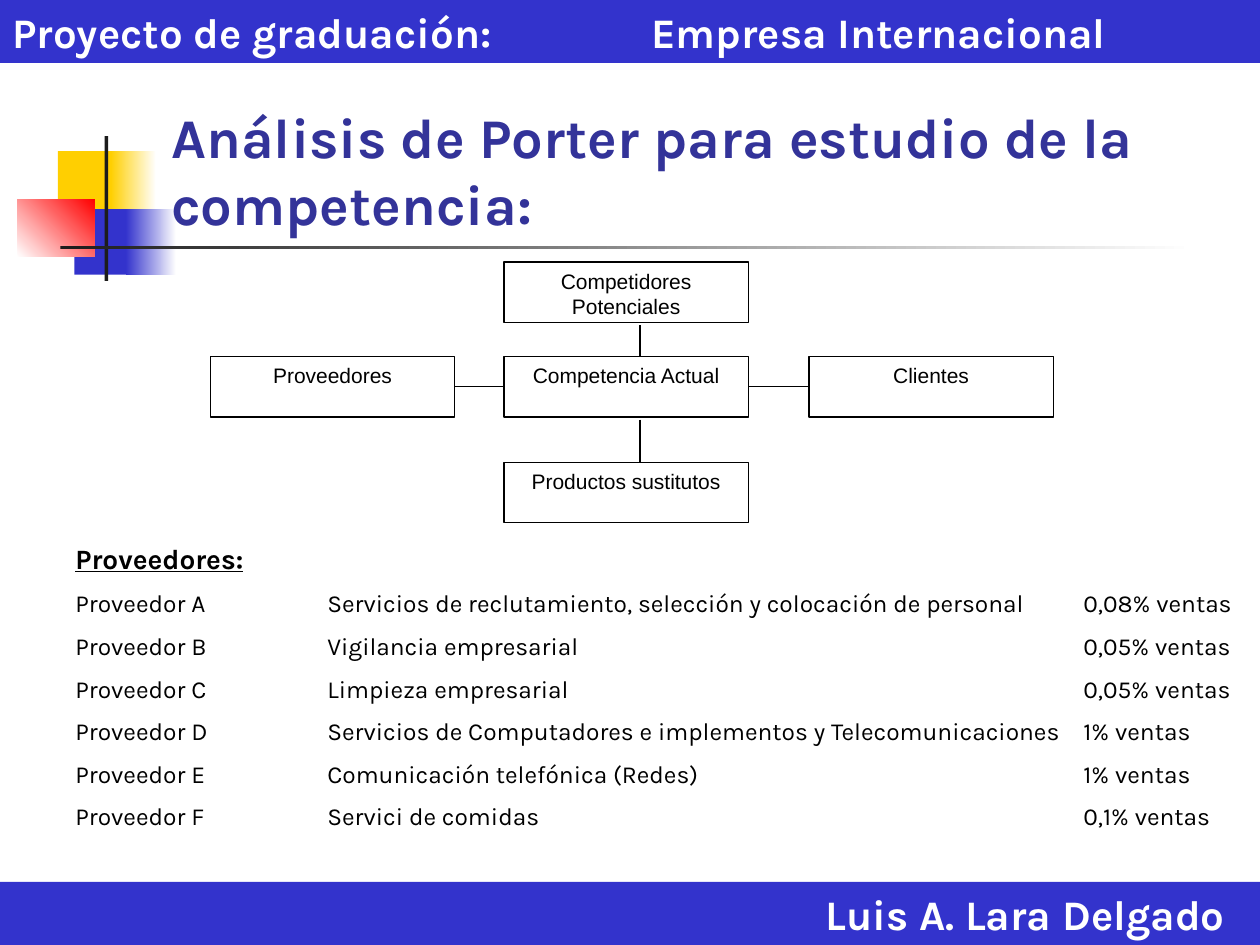
from dataclasses import dataclass

import lxml.etree
import pptx
import pptx.dml.color
import pptx.enum.shapes
import pptx.enum.text
import pptx.oxml.ns
import pptx.util

Inches = pptx.util.Inches
Pt = pptx.util.Pt
ALIGN = pptx.enum.text.PP_ALIGN
ANCHOR = pptx.enum.text.MSO_ANCHOR

COLORS = {
    "white": "FFFFFF",
    "black": "000000",
    "blue": "3333CC",
    "title": "333399",
    "yellow": "FFCF01",
    "red": "FF0000",
    "dark": "1C1C1C",
}


@dataclass(frozen=True)
class Area:
    left: float
    top: float
    width: float
    height: float

    def lengths(self) -> tuple:
        return tuple(Inches(v) for v in (self.left, self.top, self.width, self.height))


@dataclass(frozen=True)
class Ornament:
    area: Area
    colors: tuple
    angle: int = 0


@dataclass(frozen=True)
class Force:
    text: str
    left: float
    top: float


@dataclass(frozen=True)
class Supplier:
    name: str
    service: str
    share: str


ORNAMENTS = [
    Ornament(Area(0.46, 1.2, 0.48, 0.52), ("yellow",)),
    Ornament(Area(0.88, 1.2, 0.36, 0.52), ("yellow", "white")),
    Ornament(Area(0.59, 1.66, 0.46, 0.52), ("blue",)),
    Ornament(Area(1, 1.66, 0.4, 0.52), ("blue", "white")),
    Ornament(Area(0.14, 1.58, 0.61, 0.46), ("white", "red"), 45),
    Ornament(Area(0.83, 1.08, 0.03, 1.15), ("dark",)),
    Ornament(Area(0.48, 1.95, 9, 0.03), ("dark", "white")),
]

FORCES = {
    "entrants": Force("Competidores Potenciales", 4, 2.08),
    "clients": Force("Clientes", 6.42, 2.83),
    "suppliers": Force("Proveedores", 1.67, 2.83),
    "rivals": Force("Competencia Actual", 4, 2.83),
    "substitutes": Force("Productos sustitutos", 4, 3.67),
}

SUPPLIERS = [
    Supplier("Proveedor A", "Servicios de reclutamiento, selección y colocación de personal", "0,08% ventas"),
    Supplier("Proveedor B", "Vigilancia empresarial", "0,05% ventas"),
    Supplier("Proveedor C", "Limpieza empresarial", "0,05% ventas"),
    Supplier("Proveedor D", "Servicios de Computadores e implementos y Telecomunicaciones", "1% ventas"),
    Supplier("Proveedor E", "Comunicación telefónica (Redes)", "1% ventas"),
    Supplier("Proveedor F", "Servici de comidas", "0,1% ventas"),
]

BAR_FONT = {"name": "Karla", "size": Pt(24), "bold": True}
TITLE_FONT = {"name": "Karla", "size": Pt(32), "bold": True}
FORCE_FONT = {"name": "Arial", "size": Pt(12), "bold": False}
HEADING_FONT = {"name": "Karla", "size": Pt(16), "bold": True, "underline": True}
SUPPLIER_FONT = {"name": "Karla", "size": Pt(14), "bold": False}


def rgb(name: str):
    return pptx.dml.color.RGBColor.from_string(COLORS[name])


def write(para, text: str, font: dict, color: str, align=ALIGN.LEFT) -> None:
    para.alignment = align
    span = para.add_run()
    span.text = text
    for key, value in font.items():
        setattr(span.font, key, value)
    span.font.color.rgb = rgb(color)


def set_tabs(para, positions: tuple) -> None:
    properties = para._p.get_or_add_pPr()
    tabs = lxml.etree.SubElement(properties, pptx.oxml.ns.qn("a:tabLst"))
    for position in positions:
        tab = lxml.etree.SubElement(tabs, pptx.oxml.ns.qn("a:tab"))
        tab.set("pos", str(Inches(position)))
        tab.set("algn", "l")


def add_rectangle(page, area: Area, colors: tuple, angle: int = 0):
    box = page.shapes.add_shape(pptx.enum.shapes.MSO_SHAPE.RECTANGLE, *area.lengths())
    box.shadow.inherit = False
    box.line.fill.background()
    if len(colors) == 1:
        box.fill.solid()
        box.fill.fore_color.rgb = rgb(colors[0])
    else:
        box.fill.gradient()
        box.fill.gradient_angle = angle
        for stop, color, position in zip(box.fill.gradient_stops, colors, (0, 1)):
            stop.color.rgb = rgb(color)
            stop.position = position
    return box


def add_bar(page, top: float, text: str, align, tabs: tuple = ()) -> None:
    bar = add_rectangle(page, Area(0, top, 10, 0.5), ("blue",))
    frame = bar.text_frame
    frame.word_wrap = True
    frame.vertical_anchor = ANCHOR.TOP
    frame.margin_right = Inches(0.28)
    para = frame.paragraphs[0]
    write(para, text, BAR_FONT, "white", align)
    if tabs:
        set_tabs(para, tabs)


def add_force(page, force: Force):
    box = add_rectangle(page, Area(force.left, force.top, 1.94, 0.48), ("white",))
    box.line.color.rgb = rgb("black")
    box.line.width = Pt(0.75)
    box.text_frame.word_wrap = True
    box.text_frame.vertical_anchor = ANCHOR.TOP
    write(box.text_frame.paragraphs[0], force.text, FORCE_FONT, "black", ALIGN.CENTER)
    return box


def add_line(page, start: tuple = (0, 0), end: tuple = (0, 0)):
    points = [Inches(value) for value in (*start, *end)]
    line = page.shapes.add_connector(pptx.enum.shapes.MSO_CONNECTOR.STRAIGHT, *points)
    line.line.color.rgb = rgb("black")
    line.line.width = Pt(0.75)
    lxml.etree.SubElement(line._element.spPr, pptx.oxml.ns.qn("a:effectLst"))
    return line


def add_suppliers(page) -> None:
    box = page.shapes.add_textbox(*Area(0.5, 4.25, 9.5, 2.69).lengths())
    frame = box.text_frame
    frame.word_wrap = True
    write(frame.paragraphs[0], "Proveedores:", HEADING_FONT, "black")
    for supplier in SUPPLIERS:
        para = frame.add_paragraph()
        para.space_before = Pt(7.5)
        text = "\t".join((supplier.name, supplier.service, supplier.share))
        write(para, text, SUPPLIER_FONT, "black")
        set_tabs(para, (2, 8))


def place_title(page) -> None:
    title = page.shapes.title
    area = Area(1.26, 0.68, 8.52, 1.25)
    for key, value in zip(("left", "top", "width", "height"), area.lengths()):
        setattr(title, key, value)
    frame = title.text_frame
    frame.word_wrap = True
    frame.auto_size = pptx.enum.text.MSO_AUTO_SIZE.NONE
    frame.vertical_anchor = ANCHOR.BOTTOM
    write(frame.paragraphs[0], "Análisis de Porter para estudio de la competencia:", TITLE_FONT, "title")
    title.element.getparent().append(title.element)


def main() -> None:
    deck = pptx.Presentation()
    deck.slide_width, deck.slide_height = Inches(10), Inches(7.5)
    page = deck.slides.add_slide(deck.slide_layouts[5])
    for ornament in ORNAMENTS:
        add_rectangle(page, ornament.area, ornament.colors, ornament.angle)
    place_title(page)
    add_bar(page, 7, "Luis A. Lara Delgado", ALIGN.RIGHT)
    add_bar(page, 0, "Proyecto de graduación:\tEmpresa Internacional", ALIGN.LEFT, (5.07,))
    boxes = {name: add_force(page, force) for name, force in FORCES.items()}
    for top, bottom in ((3.33, 3.67), (2.58, 2.83)):
        add_line(page, (5.08, top), (5.08, bottom))
    for left, right in (("rivals", "clients"), ("suppliers", "rivals")):
        line = add_line(page)
        line.begin_connect(boxes[left], 3)
        line.end_connect(boxes[right], 1)
    add_suppliers(page)
    deck.save("out.pptx")


if __name__ == "__main__":
    main()
